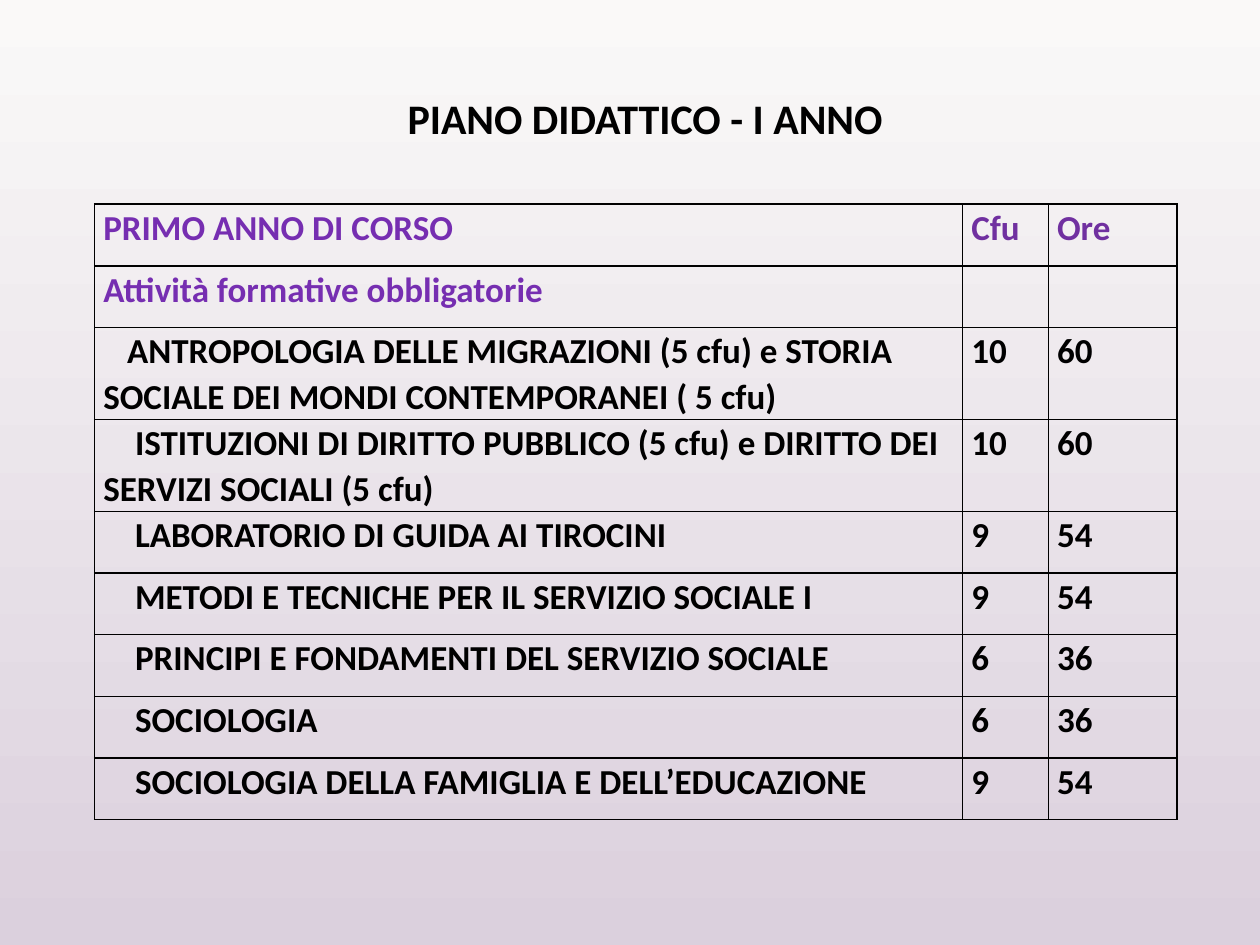
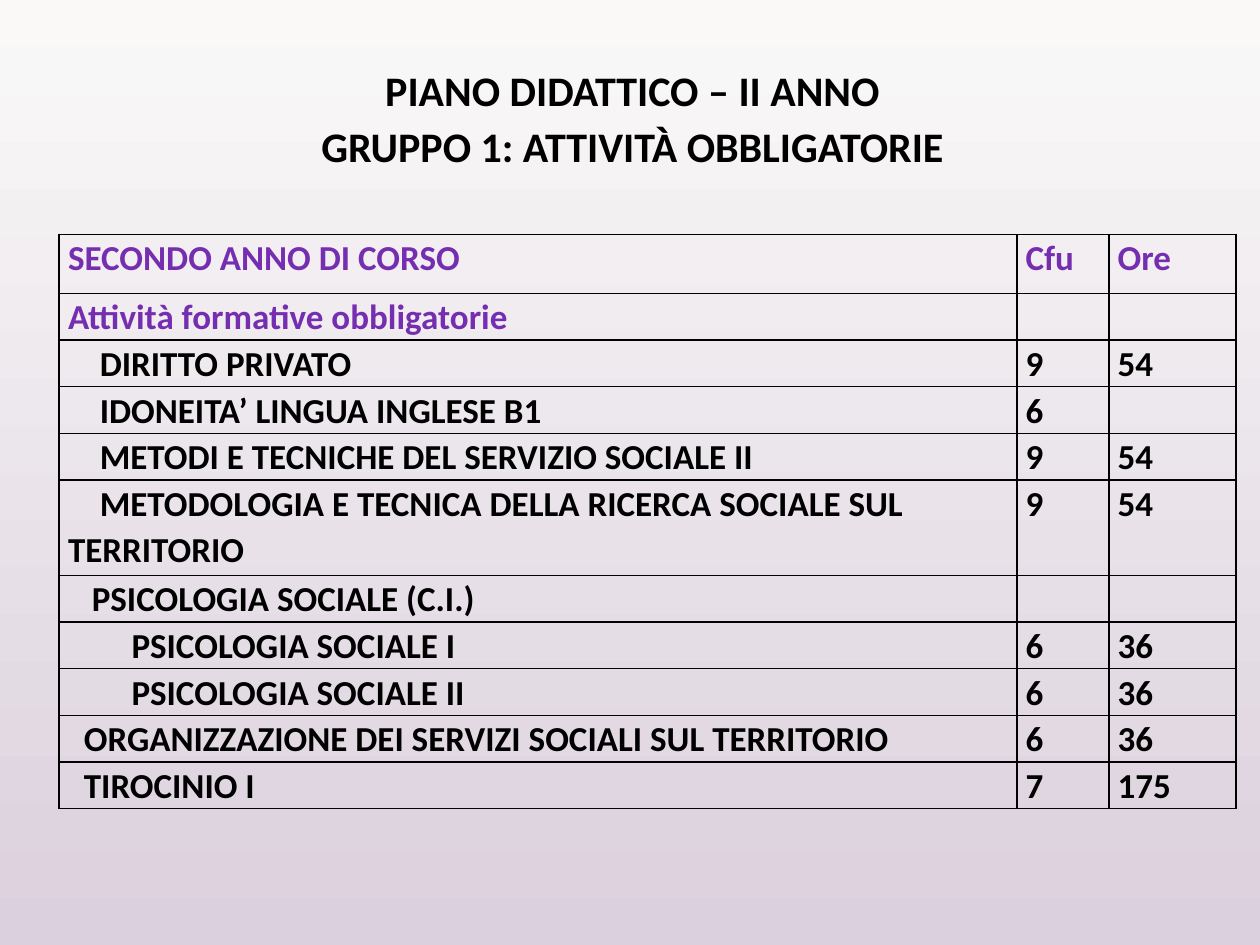
from pptx import Presentation
from pptx.dml.color import RGBColor
from pptx.enum.text import MSO_ANCHOR as Anchor, MSO_AUTO_SIZE as AutoSize, PP_ALIGN as Align
from pptx.oxml import parse_xml
from pptx.oxml.ns import nsdecls
from pptx.util import Inches, Pt

BLACK = RGBColor(0x00, 0x00, 0x00)
VIOLET = RGBColor(0x76, 0x2E, 0xB1)
PURPLE = RGBColor(0x70, 0x30, 0xA0)
SKY_TOP = RGBColor(0xFA, 0xF9, 0xF8)
SKY_BOTTOM = RGBColor(0xDB, 0xD0, 0xDD)
FONT = "Calibri"
WIDTH, HEIGHT = Inches(10), Inches(7.5)
TITLE_ONLY = 5


def across(percent):
    return int(WIDTH * percent / 100)


def down(percent):
    return int(HEIGHT * percent / 100)


INDENT_STEP = across(0.63)
CELL_MARGIN = across(0.7)

years = [
    {
        "title": ["PIANO DIDATTICO - I ANNO"],
        "title_at": (5.9, 10.13),
        "table_at": (7.5, 21.6),
        "columns": (68.9, 6.8, 10.2),
        "header_height": 6.53,
        "row_height": 6.53,
        "tall_rows": {2: 9.73, 3: 9.73},
        "hours_color": PURPLE,
        "rows": [
            (0, "PRIMO ANNO DI CORSO", "Cfu", "Ore"),
            (0, "Attività formative obbligatorie", "", ""),
            (3, "ANTROPOLOGIA DELLE MIGRAZIONI (5 cfu) e STORIA SOCIALE DEI MONDI CONTEMPORANEI ( 5 cfu)", "10", "60"),
            (4, "ISTITUZIONI DI DIRITTO PUBBLICO (5 cfu) e DIRITTO DEI SERVIZI SOCIALI (5 cfu)", "10", "60"),
            (4, "LABORATORIO DI GUIDA AI TIROCINI", "9", "54"),
            (4, "METODI E TECNICHE PER IL SERVIZIO SOCIALE I", "9", "54"),
            (4, "PRINCIPI E FONDAMENTI DEL SERVIZIO SOCIALE", "6", "36"),
            (4, "SOCIOLOGIA", "6", "36"),
            (4, "SOCIOLOGIA DELLA FAMIGLIA E DELL’EDUCAZIONE", "9", "54"),
        ],
    },
    {
        "title": ["PIANO DIDATTICO – II ANNO", "GRUPPO 1: ATTIVITÀ OBBLIGATORIE"],
        "title_at": (4.9, 7.2),
        "table_at": (4.7, 24.8),
        "columns": (76, 7.3, 10.1),
        "header_height": 6.27,
        "row_height": 4.93,
        "tall_rows": {5: 10.13},
        "hours_color": VIOLET,
        "rows": [
            (0, "SECONDO ANNO DI CORSO", "Cfu", "Ore"),
            (0, "Attività formative obbligatorie", "", ""),
            (4, "DIRITTO PRIVATO", "9", "54"),
            (4, "IDONEITA’ LINGUA INGLESE B1", "6", ""),
            (4, "METODI E TECNICHE DEL SERVIZIO SOCIALE II", "9", "54"),
            (4, "METODOLOGIA E TECNICA DELLA RICERCA SOCIALE SUL TERRITORIO", "9", "54"),
            (3, "PSICOLOGIA SOCIALE (C.I.)", "", ""),
            (8, "PSICOLOGIA SOCIALE I", "6", "36"),
            (8, "PSICOLOGIA SOCIALE II", "6", "36"),
            (2, "ORGANIZZAZIONE DEI SERVIZI SOCIALI SUL TERRITORIO", "6", "36"),
            (2, "TIROCINIO I", "7", "175"),
        ],
    },
]

deck = Presentation()
deck.slide_width, deck.slide_height = WIDTH, HEIGHT

backdrop = deck.slide_master.background.fill
backdrop.gradient()
backdrop.gradient_angle = 270
for stop, color in zip(backdrop.gradient_stops, (SKY_TOP, SKY_BOTTOM)):
    stop.color.rgb = color

for year in years:
    page = deck.slides.add_slide(deck.slide_layouts[TITLE_ONLY])

    title = page.shapes.title
    left, top = year["title_at"]
    title.left, title.top = across(left), down(top)
    title.width, title.height = across(90.6), down(9.47)
    frame = title.text_frame
    frame.auto_size = AutoSize.NONE
    frame.word_wrap = True
    frame.vertical_anchor = Anchor.TOP
    frame.margin_top = down(0.9)
    for number, line in enumerate(year["title"]):
        para = frame.add_paragraph() if number else frame.paragraphs[0]
        para.alignment = Align.CENTER
        para.line_spacing = Pt(22)
        para.space_before = Pt(10 if number else 0)
        span = para.add_run()
        span.text = line
        span.font.name, span.font.size, span.font.bold = FONT, Pt(24), True
        span.font.color.rgb = BLACK

    rows = year["rows"]
    heights = [year["header_height"]] + [year["row_height"]] * (len(rows) - 1)
    for index, height in year["tall_rows"].items():
        heights[index] = height
    left, top = year["table_at"]
    table = page.shapes.add_table(
        len(rows), 3, across(left), down(top), across(sum(year["columns"])), down(sum(heights))
    ).table
    table.first_row = table.horz_banding = False
    for column, width in zip(table.columns, year["columns"]):
        column.width = across(width)

    for row_index, (steps, *texts) in enumerate(rows):
        table.rows[row_index].height = down(heights[row_index])
        for column_index, text in enumerate(texts):
            cell = table.cell(row_index, column_index)
            cell.margin_left = cell.margin_right = CELL_MARGIN
            cell.margin_top = cell.margin_bottom = 0
            properties = cell._tc.get_or_add_tcPr()
            for side in "LRTB":
                properties.append(parse_xml(
                    f'<a:ln{side} {nsdecls("a")} w="{Pt(1)}"><a:solidFill>'
                    f'<a:srgbClr val="{BLACK}"/></a:solidFill></a:ln{side}>'
                ))
            cell.fill.background()
            if not text:
                continue
            para = cell.text_frame.paragraphs[0]
            para.line_spacing = 1.07
            para.space_after = Pt(8)
            if steps and column_index == 0:
                para._p.get_or_add_pPr().set("indent", str(steps * INDENT_STEP))
            span = para.add_run()
            span.text = text
            span.font.name, span.font.size, span.font.bold = FONT, Pt(20), True
            if row_index > 1:
                span.font.color.rgb = BLACK
            else:
                span.font.color.rgb = year["hours_color"] if column_index else VIOLET

deck.save("out.pptx")
